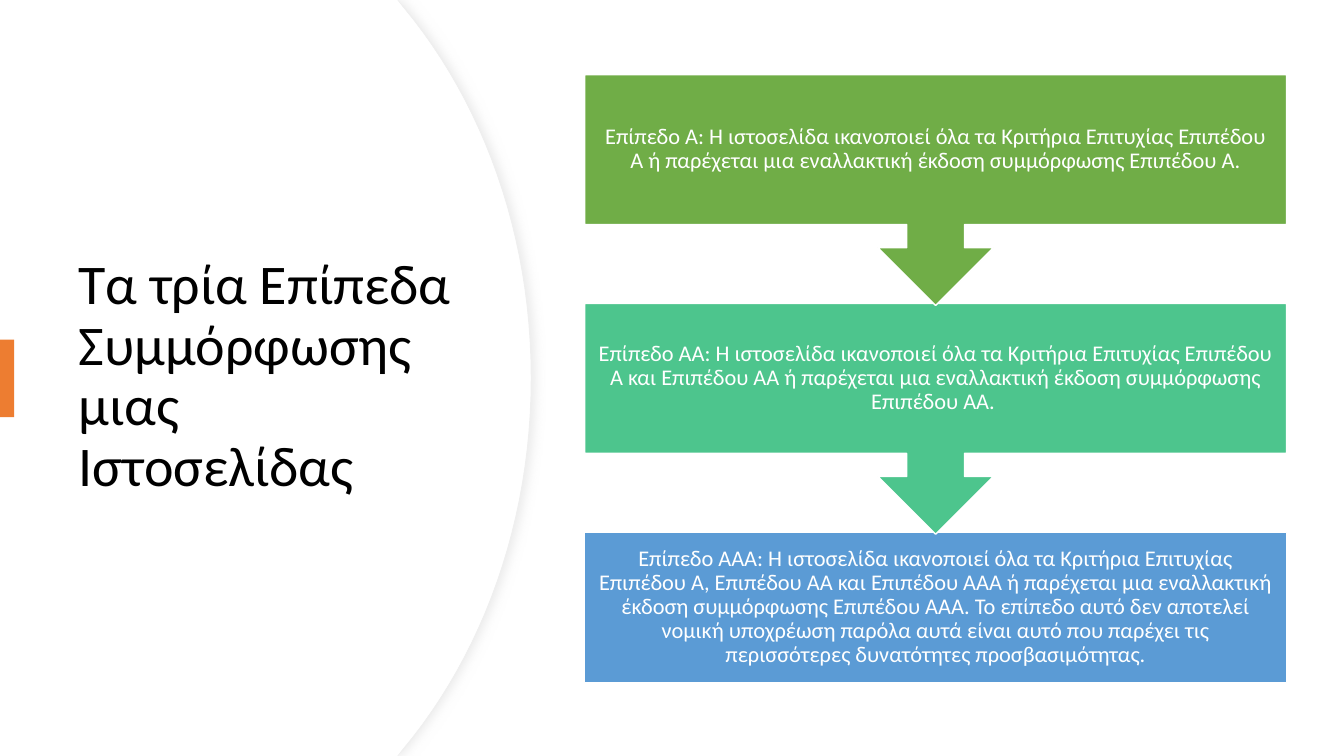
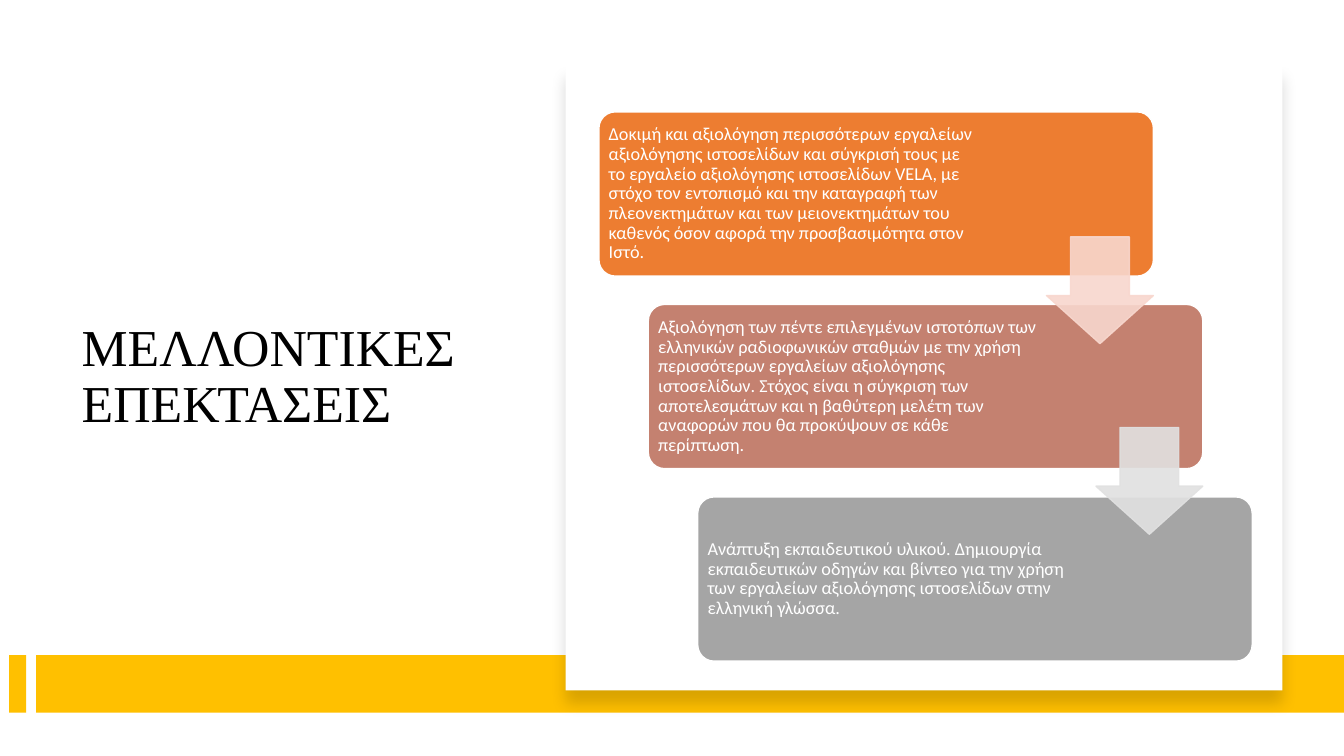
from lxml import etree
from pptx import Presentation
from pptx.dml.color import RGBColor
from pptx.enum.shapes import MSO_SHAPE
from pptx.enum.text import MSO_ANCHOR, MSO_AUTO_SIZE, PP_ALIGN
from pptx.oxml.ns import qn
from pptx.util import Inches, Pt

COLORS = {
    "white": "FFFFFF", "black": "000000", "rim": "EFEFEF", "shade": "D9D9D9",
    "orange": "ED7D31", "green": "70AD47", "mint": "4DC58D", "blue": "5B9BD5",
    "gold": "FFC000", "clay": "C48170", "gray": "A5A5A5",
    "blush": "F8D7CE", "mist": "E1E1E1",
}

LEVELS = [
    ("green", "Επίπεδο A: Η ιστοσελίδα ικανοποιεί όλα τα Κριτήρια Επιτυχίας "
     "Επιπέδου Α ή παρέχεται μια εναλλακτική έκδοση συμμόρφωσης Επιπέδου Α."),
    ("mint", "Επίπεδο ΑA: Η ιστοσελίδα ικανοποιεί όλα τα Κριτήρια Επιτυχίας "
     "Επιπέδου Α και Επιπέδου ΑΑ ή παρέχεται μια εναλλακτική έκδοση "
     "συμμόρφωσης Επιπέδου ΑΑ. "),
    ("blue", "Επίπεδο ΑΑA: Η ιστοσελίδα ικανοποιεί όλα τα Κριτήρια Επιτυχίας "
     "Επιπέδου Α, Επιπέδου ΑΑ και Επιπέδου ΑΑΑ ή παρέχεται μια εναλλακτική "
     "έκδοση συμμόρφωσης Επιπέδου ΑΑΑ. Το επίπεδο αυτό δεν αποτελεί νομική "
     "υποχρέωση παρόλα αυτά είναι αυτό που παρέχει τις περισσότερες "
     "δυνατότητες προσβασιμότητας."),
]

# fill, right inset, text
PLANS = [
    ("orange", 1.71, "Δοκιμή και αξιολόγηση περισσότερων εργαλείων αξιολόγησης "
     "ιστοσελίδων και σύγκρισή τους με το εργαλείο αξιολόγησης ιστοσελίδων "
     "VELA, με στόχο τον εντοπισμό και την καταγραφή των πλεονεκτημάτων και "
     "των μειονεκτημάτων του καθενός όσον αφορά την προσβασιμότητα στον Ιστό."),
    ("clay", 1.6, "Αξιολόγηση των πέντε επιλεγμένων ιστοτόπων των ελληνικών "
     "ραδιοφωνικών σταθμών με την χρήση περισσότερων εργαλείων αξιολόγησης "
     "ιστοσελίδων. Στόχος είναι η σύγκριση των αποτελεσμάτων και η βαθύτερη "
     "μελέτη των αναφορών που θα προκύψουν σε κάθε περίπτωση."),
    ("gray", 1.6, "Ανάπτυξη εκπαιδευτικού υλικού. Δημιουργία εκπαιδευτικών "
     "οδηγών και βίντεο για την χρήση των εργαλείων αξιολόγησης ιστοσελίδων "
     "στην ελληνική γλώσσα."),
]


def rgb(name):
    return RGBColor.from_string(COLORS[name])


def write(shape, text, size, font="Calibri", color="white",
          align=PP_ALIGN.LEFT, insets=(0.1, 0.05, 0.1, 0.05)):
    """Fill a shape with one paragraph; insets run left, top, right, bottom."""
    frame = shape.text_frame
    frame.word_wrap = True
    frame.auto_size = MSO_AUTO_SIZE.NONE
    frame.vertical_anchor = MSO_ANCHOR.MIDDLE
    (frame.margin_left, frame.margin_top,
     frame.margin_right, frame.margin_bottom) = map(Inches, insets)
    para = frame.paragraphs[0]
    para.alignment = align
    para.line_spacing = 0.9
    run = para.add_run()
    run.text = text
    run.font.size = Pt(size)
    run.font.name = font
    run.font.color.rgb = rgb(color)


def paint(shape, fill, line=None, width=1):
    shape.shadow.inherit = False
    shape.fill.solid()
    shape.fill.fore_color.rgb = rgb(fill)
    if line:
        shape.line.color.rgb = rgb(line)
        shape.line.width = Pt(width)
    else:
        shape.line.fill.background()


def block(slide, kind, box, fill, line=None, adjust=()):
    shape = slide.shapes.add_shape(kind, *map(Inches, box))
    for i, value in enumerate(adjust):
        shape.adjustments[i] = value
    paint(shape, fill, line)
    return shape


def fade(color, percent):
    etree.SubElement(color, qn("a:alpha"), val=str(percent * 1000))


def cast(shape, color, percent, blur, dist, angle):
    """Give a shape an outer shadow; blur and dist in points."""
    effects = shape._element.spPr.find(qn("a:effectLst"))
    outer = etree.SubElement(
        effects, qn("a:outerShdw"), blurRad=str(Pt(blur)), dist=str(Pt(dist)),
        dir=str(angle * 60000), algn="ctr", rotWithShape="0")
    fade(etree.SubElement(outer, qn("a:srgbClr"), val=COLORS[color]), percent)


def start(deck, title, box, **style):
    """Add a title-only slide with its title set in the given box."""
    slide = deck.slides.add_slide(deck.slide_layouts[5])
    head = slide.shapes.title
    head.left, head.top, head.width, head.height = map(Inches, box)
    write(head, title, color="black", **style)
    return slide


def dome(slide, right, height=7.5, steps=24):
    """Draw a panel from the left edge whose right side bulges out."""
    knots = ((right - 1.26, 0.08), (right - 0.48, 1.02),
             (right, 2.32), (right, height / 2))
    arc = []
    for i in range(steps + 1):
        t = i / steps
        parts = ((1 - t) ** 3, 3 * t * (1 - t) ** 2, 3 * t * t * (1 - t), t ** 3)
        arc.append(tuple(sum(p * k[axis] for p, k in zip(parts, knots))
                         for axis in (0, 1)))
    upper = [(3.94, 0)] + arc
    lower = [(x, height - y) for x, y in reversed(upper[:-1])]
    points = [(Inches(x), Inches(y)) for x, y in upper + lower + [(0, height)]]
    pen = slide.shapes.build_freeform(0, 0)
    pen.add_line_segments(points, close=True)
    return pen.convert_to_shape()


def flow(slide, left, top, width):
    """Stack the levels, each pointing down to the next."""
    step, tall, body = 2.27, 2.29, 1.49
    for i, (fill, text) in reversed(list(enumerate(LEVELS))):
        last = i == len(LEVELS) - 1
        kind = MSO_SHAPE.RECTANGLE if last else MSO_SHAPE.DOWN_ARROW_CALLOUT
        box = (left, top + i * step, width, body if last else tall)
        adjust = () if last else (0.25, 0.25, 0.25, 0.65)
        card = block(slide, kind, box, fill, "white", adjust)
        write(card, text, 16, align=PP_ALIGN.CENTER, insets=(0.12,) * 4)


def stairs(slide, left, top):
    """Set the plans as steps, joined by pale arrows."""
    right, down = 0.49, 1.91
    for i, (fill, inset, text) in enumerate(PLANS):
        card = block(slide, MSO_SHAPE.ROUNDED_RECTANGLE,
                     (left + i * right, top + i * down, 5.5, 1.63),
                     fill, "white", (0.1,))
        write(card, text, 13, insets=(0.05, 0.05, inset, 0.05))
    for i, tint in enumerate(("blush", "mist")):
        box = (left + 4.44 + i * right, top + 1.24 + i * down * 0.99, 1.06, 1.06)
        arrow = block(slide, MSO_SHAPE.DOWN_ARROW, box, tint, tint, (0.55, 0.45))
        for color in arrow._element.spPr.iter(qn("a:srgbClr")):
            fade(color, 90)


def band(slide, top, height):
    for left, width in ((0.09, 0.17), (0.36, 12.97)):
        block(slide, MSO_SHAPE.RECTANGLE, (left, top, width, height), "gold")


def to_back(slide, shape):
    """Send a shape behind everything drawn so far."""
    slide.shapes._spTree.insert(2, shape._element)


def levels(deck):
    slide = start(deck, "Τα τρία Επίπεδα Συμμόρφωσης μιας Ιστοσελίδας",
                  (0.68, 1.27, 3.94, 4.95), size=40)
    face = dome(slide, 5.26)
    paint(face, "white")
    to_back(slide, face)
    rim = dome(slide, 5.27)
    paint(rim, "white", "rim", 0.75)
    cast(rim, "shade", 50, 7, 3, 0)
    to_back(slide, rim)
    block(slide, MSO_SHAPE.RECTANGLE, (0, 3.37, 0.14, 0.77), "orange")
    flow(slide, 5.8, 0.74, 6.96)


def plans(deck):
    slide = start(deck, "ΜΕΛΛΟΝΤΙΚΕΣ ΕΠΕΚΤΑΣΕΙΣ", (0.71, 1.2, 4.15, 5.1),
                  size=37, font="Times New Roman")
    band(slide, 6.5, 0.57)
    panel = block(slide, MSO_SHAPE.RECTANGLE, (5.61, 0.64, 7.11, 6.21), "white")
    cast(panel, "black", 15, 11, 10, 90)
    stairs(slide, 5.94, 1.11)


def main():
    deck = Presentation()
    deck.slide_width, deck.slide_height = Inches(13.33), Inches(7.5)
    levels(deck)
    plans(deck)
    deck.save("out.pptx")


if __name__ == "__main__":
    main()
